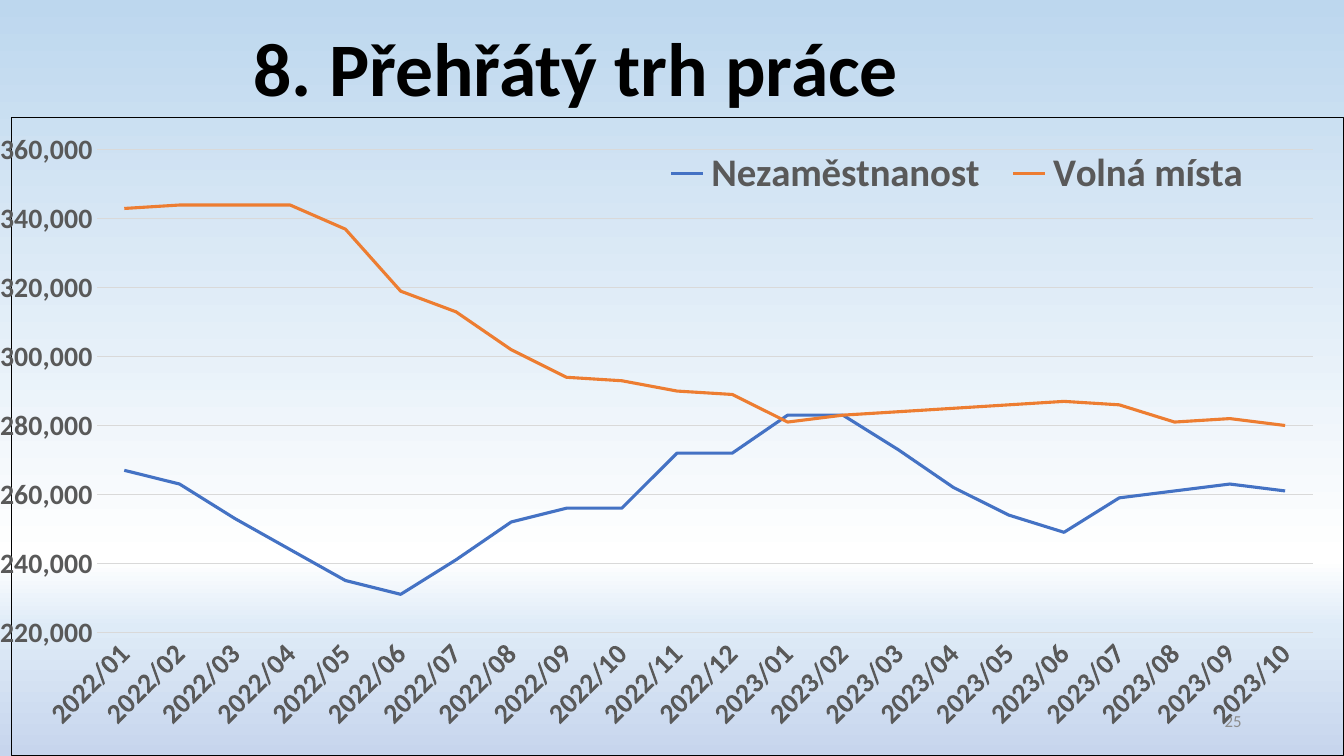
from lxml import etree
from pptx import Presentation
from pptx.chart.data import CategoryChartData
from pptx.dml.color import RGBColor
from pptx.enum import chart as charts, text
from pptx.oxml import parse_xml
from pptx.oxml.ns import nsdecls, qn
from pptx.util import Pt

BLACK = RGBColor(0x00, 0x00, 0x00)
DARK_GREY = RGBColor(0x59, 0x59, 0x59)
MID_GREY = RGBColor(0x8C, 0x8C, 0x8C)
LIGHT_GREY = RGBColor(0xD9, 0xD9, 0xD9)
BLUE = RGBColor(0x44, 0x72, 0xC4)
ORANGE = RGBColor(0xED, 0x7D, 0x31)
SKY = [(0, RGBColor(0xBD, 0xD7, 0xEE)), (74, RGBColor(0xFF, 0xFF, 0xFF)),
       (83, RGBColor(0xDE, 0xEB, 0xF7)), (100, RGBColor(0xC7, 0xD5, 0xED))]

MONTHS = [f"{2022 + i // 12}/{i % 12 + 1:02}" for i in range(22)]
# Thousands of people or jobs, month by month
SERIES = [
    ("Nezaměstnanost", BLUE,
     [267, 263, 253, 244, 235, 231, 241, 252, 256, 256, 272,
      272, 283, 283, 273, 262, 254, 249, 259, 261, 263, 261]),
    ("Volná místa", ORANGE,
     [343, 344, 344, 344, 337, 319, 313, 302, 294, 293, 290,
      289, 281, 283, 284, 285, 286, 287, 286, 281, 282, 280]),
]


class SlideBuilder:
    font_name = "Calibri"

    def __init__(self, deck):
        self.page = deck.slides.add_slide(deck.slide_layouts[5])

    def style(self, font, size, color, bold=False):
        font.name, font.size, font.bold = self.font_name, Pt(size), bold
        font.color.rgb = color

    def background(self, stops):
        fill = self.page.background.fill
        fill.gradient()
        fill.gradient_angle = 270
        stop_list = next(self.page.element.iter(qn("a:gsLst")))
        for old in list(stop_list):
            stop_list.remove(old)
        for percent, color in stops:
            stop = etree.SubElement(stop_list, qn("a:gs"), pos=str(percent * 1000))
            etree.SubElement(stop, qn("a:srgbClr"), val=str(color))

    def fill_text(self, box, words, size, color, bold, align):
        frame = box.text_frame
        frame.vertical_anchor = text.MSO_ANCHOR.MIDDLE
        para = frame.paragraphs[0]
        para.text = words
        para.alignment = align
        self.style(para.font, size, color, bold)
        return frame

    def title(self, words, left, top, width, height):
        box = self.page.shapes.title
        box.left, box.top, box.width, box.height = map(Pt, (left, top, width, height))
        frame = self.fill_text(box, words, 54, BLACK, True, text.PP_ALIGN.LEFT)
        frame.word_wrap = False
        frame.auto_size = text.MSO_AUTO_SIZE.SHAPE_TO_FIT_TEXT

    def page_number(self, number, left, top, width, height):
        box = self.page.shapes.add_textbox(*map(Pt, (left, top, width, height)))
        frame = self.fill_text(box, number, 12, MID_GREY, False, text.PP_ALIGN.RIGHT)
        frame.word_wrap = True

    def place(self, part, index, inner, *fractions):
        """Give a chart part a fixed place as fractions of the chart."""
        for old in part.findall(qn("c:layout")):
            part.remove(old)
        layout = etree.Element(qn("c:layout"))
        manual = etree.SubElement(layout, qn("c:manualLayout"))
        if inner:
            etree.SubElement(manual, qn("c:layoutTarget"), val="inner")
        for mode in ("xMode", "yMode"):
            etree.SubElement(manual, qn(f"c:{mode}"), val="edge")
        for key, value in zip("xywh", fractions):
            etree.SubElement(manual, qn(f"c:{key}"), val=str(value))
        part.insert(index, layout)

    def line_chart(self, months, series, left, top, width, height):
        data = CategoryChartData(number_format="#,##0")
        data.categories = months
        for name, _, thousands in series:
            data.add_series(name, [value * 1000 for value in thousands])
        chart = self.page.shapes.add_chart(
            charts.XL_CHART_TYPE.LINE, *map(Pt, (left, top, width, height)), data).chart
        chart.has_title = False
        self.style(chart.font, 28, BLACK, True)
        for line, (_, color, _) in zip(chart.plots[0].series, series):
            line.smooth = False
            line.format.line.color.rgb = color
            line.format.line.width = Pt(2.25)
            line.marker.style = charts.XL_MARKER_STYLE.NONE
        self.axes(chart)
        self.legend(chart)
        self.place(next(chart.element.iter(qn("c:plotArea"))), 0, True,
                   0.064, 0.051, 0.913, 0.756)
        # Outer border
        chart.element.find(qn("c:chart")).addnext(parse_xml(
            f'<c:spPr {nsdecls("c", "a")}><a:noFill/><a:ln w="{Pt(0.75)}"><a:solidFill>'
            f'<a:srgbClr val="{BLACK}"/></a:solidFill></a:ln></c:spPr>'))

    def axes(self, chart):
        months, amounts = chart.category_axis, chart.value_axis
        for axis in (months, amounts):
            axis.major_tick_mark = axis.minor_tick_mark = charts.XL_TICK_MARK.NONE
            self.style(axis.tick_labels.font, 20, DARK_GREY, True)
        amounts.minimum_scale, amounts.maximum_scale = 220000, 360000
        amounts.major_unit = 20000
        amounts.tick_labels.number_format = "#,##0"
        amounts.tick_labels.number_format_is_linked = False
        amounts.format.line.fill.background()
        for line in (months.format.line, amounts.major_gridlines.format.line):
            line.color.rgb = LIGHT_GREY
            line.width = Pt(0.75)
        # Slanted month names
        next(months.tick_labels.font._element.iterancestors(qn("c:txPr"))).find(
            qn("a:bodyPr")).set("rot", "-2700000")

    def legend(self, chart):
        chart.has_legend = True
        legend = chart.legend
        legend.position = charts.XL_LEGEND_POSITION.RIGHT
        legend.include_in_layout = False
        self.style(legend.font, 28, DARK_GREY, True)
        self.place(next(chart.element.iter(qn("c:legend"))), 1, False,
                   0.48, 0.045, 0.46, 0.085)


def main():
    deck = Presentation()
    deck.slide_width, deck.slide_height = Pt(960), Pt(540)
    slide = SlideBuilder(deck)
    slide.background(SKY)
    slide.page_number("25", 678, 500.5, 216, 28.75)
    slide.title("8. Přehřátý trh práce", 174, 11, 480, 72.5)
    slide.line_chart(MONTHS, SERIES, 0, 83.5, 960, 456.5)
    deck.save("out.pptx")


if __name__ == "__main__":
    main()
